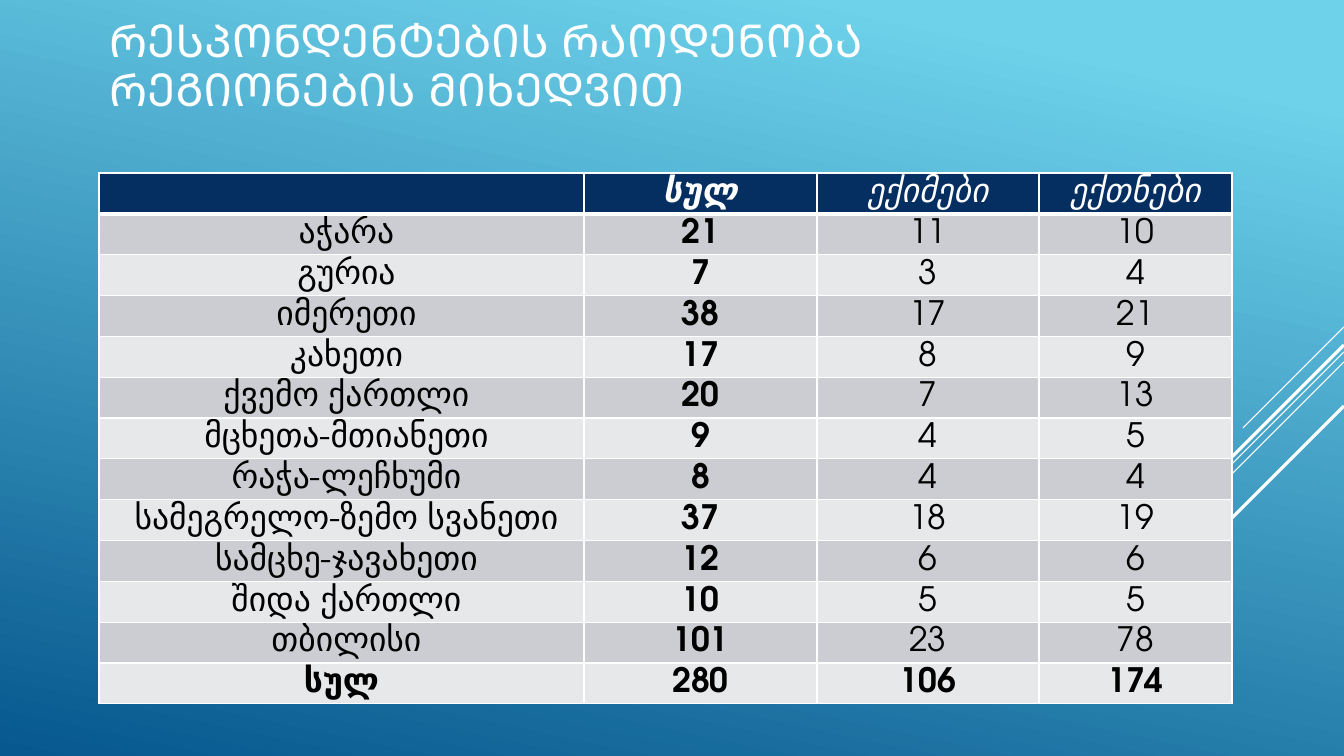
"""Build the slide with the number of respondents by region."""
from typing import NamedTuple

from lxml import etree
from pptx import Presentation
from pptx.dml.color import RGBColor
from pptx.enum.shapes import MSO_CONNECTOR
from pptx.enum.text import MSO_ANCHOR, PP_ALIGN
from pptx.oxml.ns import qn
from pptx.util import Emu, Pt

STRAIGHT = MSO_CONNECTOR.STRAIGHT
MIDDLE = MSO_ANCHOR.MIDDLE
LEFT, CENTER = PP_ALIGN.LEFT, PP_ALIGN.CENTER

EMU_PER_PX = 914400 / 100.8
SLIDE_W, SLIDE_H = 1344, 756
FONT = "TeX Gyre Adventor"
COLORS = {
    "sky": "6ED2EB",
    "deep": "06588E",
    "white": "FFFFFF",
    "black": "000000",
    "header": "052F61",
    "odd": "CCCDD2",
    "even": "E7E8EA",
}
TITLE = "ᲠᲔᲡᲞᲝᲜᲓᲔᲜᲢᲔᲑᲘᲡ ᲠᲐᲝᲓᲔᲜᲝᲑᲐ ᲠᲔᲒᲘᲝᲜᲔᲑᲘᲡ ᲛᲘᲮᲔᲓᲕᲘᲗ"
COLUMN_WIDTHS = (485, 233, 222, 193)
TABLE_LEFT, TABLE_TOP, TABLE_HEIGHT = 99, 173, 531


class Ray(NamedTuple):
    """A 45-degree line running down and left from the right slide edge."""

    top: int
    reach: int
    weight: float


class Region(NamedTuple):
    """A table row: label, total, doctors and nurses."""

    label: str
    total: str
    doctors: str
    nurses: str


RAYS = (
    Ray(327, 101, 0.75),
    Ray(352, 329, 0.75),
    Ray(362, 209, 0.75),
    Ray(345, 193, 2.25),
    Ray(406, 140, 2.25),
)
ROWS = (
    Region("", "სულ", "ექიმები", "ექთნები"),
    Region("აჭარა", "21", "11", "10"),
    Region("გურია", "7", "3", "4"),
    Region("იმერეთი", "38", "17", "21"),
    Region("კახეთი", "17", "8", "9"),
    Region("ქვემო ქართლი", "20", "7", "13"),
    Region("მცხეთა-მთიანეთი", "9", "4", "5"),
    Region("რაჭა-ლეჩხუმი", "8", "4", "4"),
    Region("სამეგრელო-ზემო სვანეთი", "37", "18", "19"),
    Region("სამცხე-ჯავახეთი", "12", "6", "6"),
    Region("შიდა ქართლი", "10", "5", "5"),
    Region("თბილისი", "101", "23", "78"),
    Region("სულ", "280", "106", "174"),
)
LAST_ROW = len(ROWS) - 1


def px(length: int) -> Emu:
    """Turn pixels into EMU."""
    return Emu(round(length * EMU_PER_PX))


def rgb(name: str) -> RGBColor:
    """Look up a named colour."""
    return RGBColor.from_string(COLORS[name])


def set_background(s) -> None:
    """Fill the slide with the blue gradient."""
    fill = s.background.fill
    fill.gradient()
    fill.gradient_angle = 258
    for stop, name, position in zip(fill.gradient_stops, ("sky", "deep"), (0.1, 1)):
        stop.color.rgb = rgb(name)
        stop.position = position


def add_ray(s, ray: Ray) -> None:
    """Draw one diagonal line."""
    line = s.shapes.add_connector(
        STRAIGHT, px(SLIDE_W), px(ray.top), px(SLIDE_W - ray.reach), px(ray.top + ray.reach)
    )
    line.line.color.rgb = rgb("white")
    line.line.width = Pt(ray.weight)
    etree.SubElement(line._element.spPr, qn("a:effectLst"))


def style_paragraph(p, size: float, color: str, align, bold: bool, italic: bool) -> None:
    """Set the alignment and font of a paragraph."""
    p.alignment = align
    p.font.name = FONT
    p.font.size = Pt(size)
    p.font.color.rgb = rgb(color)
    p.font.bold = bold
    p.font.italic = italic


def set_title(s) -> None:
    """Place and format the title."""
    sp = s.shapes.title
    sp.left, sp.top, sp.width, sp.height = px(99), px(32), px(940), px(124)
    tf = sp.text_frame
    tf.text = TITLE
    tf.word_wrap = True
    tf.vertical_anchor = MIDDLE
    tf.margin_bottom = px(59)
    p = tf.paragraphs[0]
    p.line_spacing = 0.9
    style_paragraph(p, 32.4, "white", LEFT, False, False)


def set_borders(cell, row: int) -> None:
    """Outline a cell in white, with a heavier rule below the header."""
    weights = {"L": 1, "R": 1, "T": 3 if row == 1 else 1, "B": 3 if row == 0 else 1}
    for side, weight in weights.items():
        ln = etree.SubElement(cell._tc.get_or_add_tcPr(), qn(f"a:ln{side}"), w=str(Pt(weight)))
        fill = etree.SubElement(ln, qn("a:solidFill"))
        etree.SubElement(fill, qn("a:srgbClr"), val=COLORS["white"])


def fill_cell(cell, row: int, col: int, text: str) -> None:
    """Write and format one table cell."""
    header = row == 0
    set_borders(cell, row)
    cell.fill.solid()
    cell.fill.fore_color.rgb = rgb("header" if header else "odd" if row % 2 else "even")
    cell.vertical_anchor = MIDDLE
    cell.margin_left = px(10 if col == 0 and 0 < row < LAST_ROW else 0)
    cell.margin_right = cell.margin_top = cell.margin_bottom = 0
    p = cell.text_frame.paragraphs[0]
    p.text = text
    bold = col == 1 or row == LAST_ROW
    style_paragraph(p, 24, "white" if header else "black", CENTER, bold, header)


def add_region_table(s) -> None:
    """Draw the table of respondents."""
    table = s.shapes.add_table(
        len(ROWS), len(COLUMN_WIDTHS), px(TABLE_LEFT), px(TABLE_TOP),
        px(sum(COLUMN_WIDTHS)), px(TABLE_HEIGHT),
    ).table
    table.horz_banding = False
    for column, width in zip(table.columns, COLUMN_WIDTHS):
        column.width = px(width)
    for row, region in enumerate(ROWS):
        for col, text in enumerate(region):
            fill_cell(table.cell(row, col), row, col, text)


def main() -> None:
    """Build and save the presentation."""
    prs = Presentation()
    prs.slide_width, prs.slide_height = px(SLIDE_W), px(SLIDE_H)
    s = prs.slides.add_slide(prs.slide_layouts[5])
    set_background(s)
    for ray in RAYS:
        add_ray(s, ray)
    set_title(s)
    add_region_table(s)
    prs.save("out.pptx")


if __name__ == "__main__":
    main()
